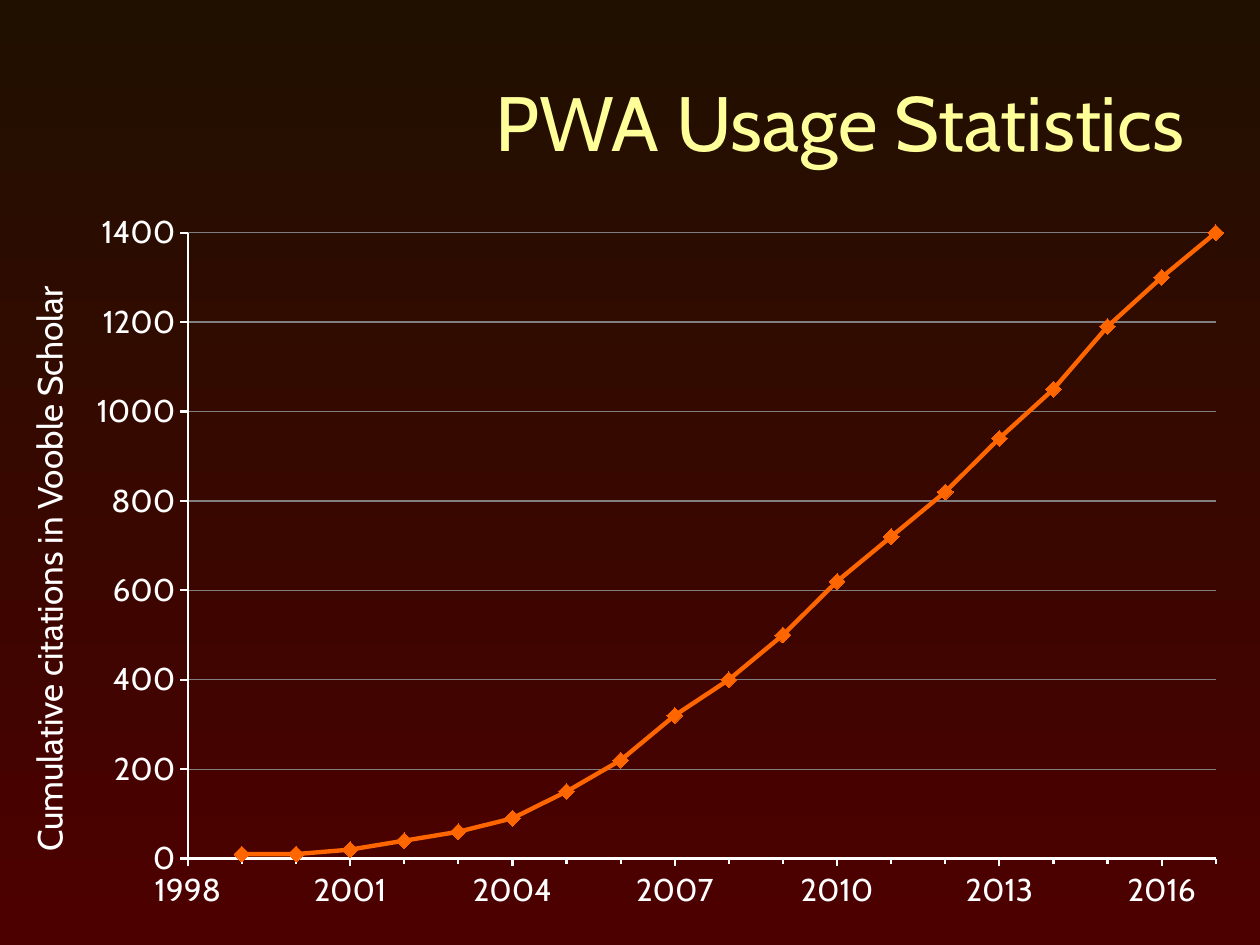
"""Build a slide charting the cumulative citations of PWA by year."""
from lxml import etree
from pptx import Presentation
from pptx.chart.data import XyChartData
from pptx.dml.color import RGBColor
from pptx.enum.chart import XL_CHART_TYPE as ChartType, XL_MARKER_STYLE as Marker
from pptx.enum.chart import XL_TICK_MARK as Tick
from pptx.enum.text import MSO_ANCHOR as Anchor, PP_ALIGN as Align
from pptx.oxml.ns import qn
from pptx.util import Inches, Pt

TOP_BROWN = RGBColor(0x20, 0x10, 0x00)
BOTTOM_RED = RGBColor(0x4D, 0x00, 0x00)
YELLOW = RGBColor(0xFF, 0xFF, 0x99)
WHITE = RGBColor(0xFF, 0xFF, 0xFF)
GREY = RGBColor(0x80, 0x80, 0x80)
ORANGE = RGBColor(0xFF, 0x66, 0x00)
FONT = "Cabin"
COLUMNS, ROWS = 100, 75
FIRST_YEAR = 1999
CITATIONS = [10, 10, 20, 40, 60, 90, 150, 220, 320, 400, 500, 620, 720, 820,
             940, 1050, 1190, 1300, 1400]
PLOT_PERCENT = {"x": 9.85, "y": 4.65, "w": 88.2, "h": 86.4}

presentation = Presentation()
presentation.slide_width, presentation.slide_height = Inches(10), Inches(7.5)
slide = presentation.slides.add_slide(presentation.slide_layouts[6])


def cells(left, top, width, height):
    """Turn columns and rows of the slide's grid into lengths."""
    column = presentation.slide_width / COLUMNS
    row = presentation.slide_height / ROWS
    return int(left * column), int(top * row), int(width * column), int(height * row)


def add_text(text, box, size, color, align=Align.LEFT, anchor=Anchor.TOP, rotation=0):
    """Add one line of formatted text."""
    shape = slide.shapes.add_textbox(*cells(*box))
    shape.rotation = rotation
    frame = shape.text_frame
    frame.word_wrap = True
    frame.vertical_anchor = anchor
    paragraph = frame.paragraphs[0]
    paragraph.alignment = align
    run = paragraph.add_run()
    run.text = text
    run.font.name, run.font.size = FONT, Pt(size)
    run.font.color.rgb = color


background = slide.background.fill
background.gradient()
background.gradient_angle = 270
for stop, color, position in zip(background.gradient_stops, (TOP_BROWN, BOTTOM_RED), (0, 1)):
    stop.color.rgb = color
    stop.position = position

add_text("PWA Usage Statistics", (5, 4.2, 90, 10.8), 44, YELLOW,
         align=Align.RIGHT, anchor=Anchor.MIDDLE)

chart_data = XyChartData()
citation_data = chart_data.add_series("Series 1")
for year, count in enumerate(CITATIONS, FIRST_YEAR):
    citation_data.add_data_point(year, count)
chart = slide.shapes.add_chart(ChartType.XY_SCATTER_LINES,
                               *cells(5.8, 15.8, 92.5, 57.5), chart_data).chart
chart.has_legend = chart.has_title = False
chart.font.name, chart.font.size = FONT, Pt(18)
chart.font.color.rgb = WHITE
chart.plots[0].vary_by_categories = False

plot_area = chart.plots[0]._element.getparent()
for old_layout in plot_area.findall(qn("c:layout")):
    plot_area.remove(old_layout)
layout = etree.Element(qn("c:layout"))
plot_area.insert(0, layout)
manual_layout = etree.SubElement(layout, qn("c:manualLayout"))
plot_settings = {"layoutTarget": "inner", "xMode": "edge", "yMode": "edge"}
plot_settings.update({name: percent / 100 for name, percent in PLOT_PERCENT.items()})
for name, value in plot_settings.items():
    etree.SubElement(manual_layout, qn(f"c:{name}")).set("val", str(value))

year_axis, count_axis = chart.category_axis, chart.value_axis
for axis, low, high, step in ((year_axis, 1998, 2017, 3), (count_axis, 0, 1400, 200)):
    axis.minimum_scale, axis.maximum_scale, axis.major_unit = low, high, step
    axis.major_tick_mark, axis.minor_tick_mark = Tick.OUTSIDE, Tick.NONE
    axis.tick_labels.number_format = "General"
    axis.tick_labels.number_format_is_linked = False
    axis.format.line.color.rgb = WHITE
    axis.format.line.width = Pt(1.25)
year_axis.has_major_gridlines = False
year_axis.minor_unit = 1
year_axis.minor_tick_mark = Tick.OUTSIDE
count_axis.has_major_gridlines = True
count_axis.major_gridlines.format.line.color.rgb = GREY
count_axis.major_gridlines.format.line.width = Pt(0.75)

series = chart.plots[0].series[0]
series.smooth = False
series.format.line.color.rgb = ORANGE
series.format.line.width = Pt(2.5)
series.marker.style, series.marker.size = Marker.DIAMOND, 9
series.marker.format.fill.solid()
series.marker.format.fill.fore_color.rgb = ORANGE
series.marker.format.line.color.rgb = ORANGE

add_text("Cumulative citations in Vooble Scholar", (-21.2, 41.3, 50.2, 4.4), 20, WHITE,
         rotation=270)

presentation.save("out.pptx")
